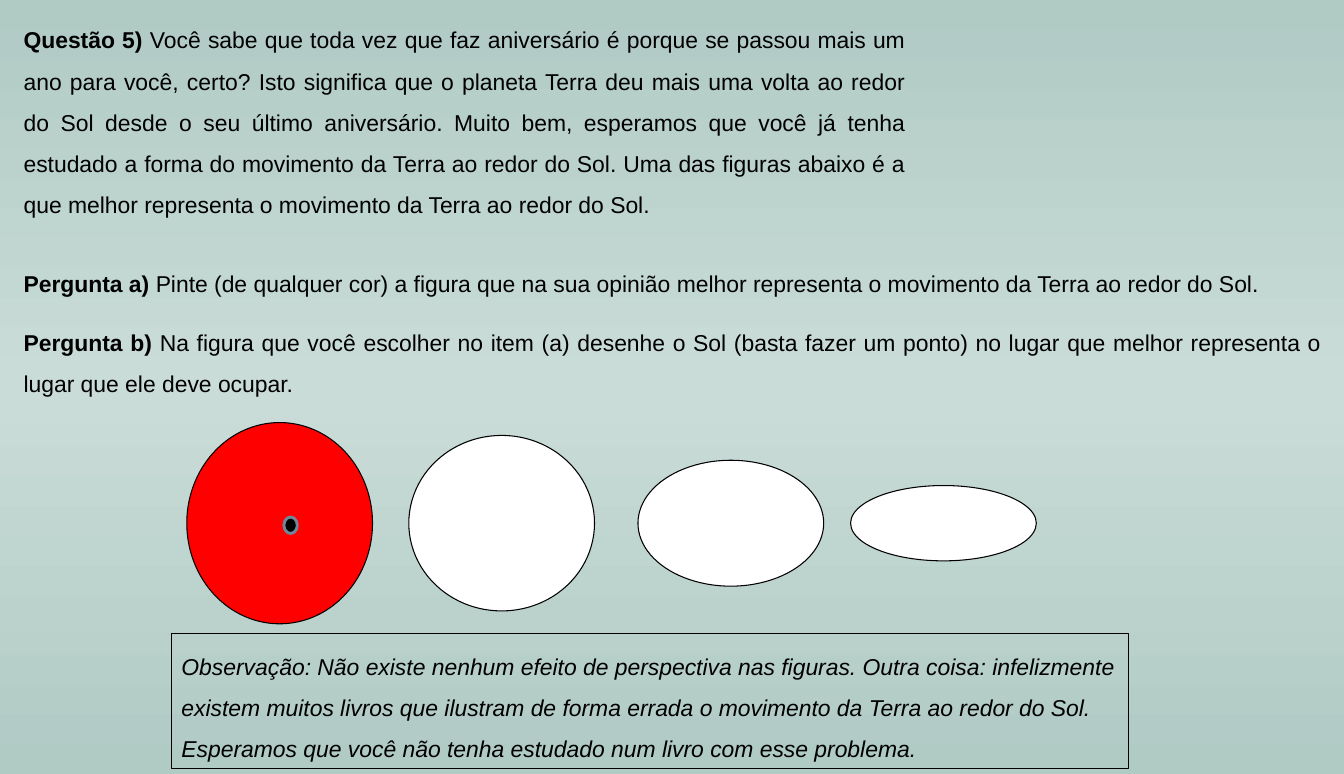
from copy import deepcopy

from pptx import Presentation
from pptx import util as u
from pptx.dml.color import RGBColor
from pptx.enum import shapes, text
from pptx.oxml.ns import qn

WIDE, HIGH = u.Inches(13.02), u.Inches(7.5)
BLACK = RGBColor(0x00, 0x00, 0x00)
WHITE = RGBColor(0xFF, 0xFF, 0xFF)
RED = RGBColor(0xFF, 0x00, 0x00)
SLATE = RGBColor(0x6D, 0x87, 0x9B)
SAGE = RGBColor(0xB0, 0xCA, 0xC4)
MIST = RGBColor(0xCA, 0xDC, 0xD8)

LEFT = 1
FULL = 98.08
ORBIT = 13.82
MIDDLE = 67.6
ORBITS = [(13.9, 26, RED), (30.42, 22.67, WHITE),
          (47.47, 16.27, WHITE), (63.29, 9.73, WHITE)]

INTRO = (
    "Você sabe que toda vez que faz aniversário é porque se passou mais um ano "
    "para você, certo? Isto significa que o planeta Terra deu mais uma volta ao "
    "redor do Sol desde o seu último aniversário. Muito bem, esperamos que você "
    "já tenha estudado a forma do movimento da Terra ao redor do Sol. Uma das "
    "figuras abaixo é a que melhor representa o movimento da Terra ao redor do Sol.")
PAINT = (
    " Pinte (de qualquer cor) a figura que na sua opinião melhor representa o "
    "movimento da Terra ao redor do Sol.")
DRAW = (
    " Na figura que você escolher no item (a) desenhe o Sol (basta fazer um "
    "ponto) no lugar que melhor representa o lugar que ele deve ocupar.")
NOTE = (
    "Observação: Não existe nenhum efeito de perspectiva nas figuras. Outra "
    "coisa: infelizmente existem muitos livros que ilustram de forma errada o "
    "movimento da Terra ao redor do Sol. Esperamos que você não tenha estudado "
    "num livro com esse problema.")


def place(x, y, w, h):
    return [round(share * side / 100)
            for share, side in zip((x, y, w, h), (WIDE, HIGH) * 2)]


def paint_back(slide):
    fill = slide.background.fill
    fill.gradient()
    fill.gradient_angle = 270
    stops = slide.element.find(".//" + qn("a:gsLst"))
    stops.insert(1, deepcopy(stops[0]))
    for stop, color, spot in zip(fill.gradient_stops, (SAGE, MIST, SAGE), (0, 0.5, 1)):
        stop.color.rgb = color
        stop.position = spot


def add_run(para, words, bold=False, italic=False):
    run = para.add_run()
    run.text = words
    font = run.font
    font.name, font.size = "Arial", u.Pt(16)
    font.bold, font.italic = bold, italic
    font.color.rgb = BLACK


def add_text(slide, box, align):
    shape = slide.shapes.add_textbox(*place(*box))
    frame = shape.text_frame
    frame.word_wrap = True
    frame.auto_size = text.MSO_AUTO_SIZE.SHAPE_TO_FIT_TEXT
    para = frame.paragraphs[0]
    para.alignment = align
    para.line_spacing = 1.5
    return shape, para


def add_task(slide, box, label, words):
    _, para = add_text(slide, box, text.PP_ALIGN.JUSTIFY)
    add_run(para, label, bold=True)
    add_run(para, words)


def add_note(slide, box, words):
    shape, para = add_text(slide, box, text.PP_ALIGN.LEFT)
    shape.line.color.rgb = BLACK
    shape.line.width = u.Pt(0.75)
    add_run(para, words, italic=True)


def add_oval(slide, box, fill, line=BLACK, width=0.75):
    oval = slide.shapes.add_shape(shapes.MSO_SHAPE.OVAL, *place(*box))
    oval.shadow.inherit = False
    oval.fill.solid()
    oval.fill.fore_color.rgb = fill
    oval.line.color.rgb = line
    oval.line.width = u.Pt(width)


def main():
    deck = Presentation()
    deck.slide_width, deck.slide_height = WIDE, HIGH
    slide = deck.slides.add_slide(deck.slide_layouts[6])
    paint_back(slide)
    add_task(slide, (LEFT, 0.93, 67.13, 27.6), "Questão 5) ", INTRO)
    for x, tall, color in ORBITS:
        add_oval(slide, (x, MIDDLE - tall / 2, ORBIT, tall), color)
    add_task(slide, (LEFT, 32.4, FULL, 6), "Pergunta a)", PAINT)
    add_task(slide, (LEFT, 40, FULL, 11.47), "Pergunta b)", DRAW)
    add_oval(slide, (21.12, 66.8, 1, 2.13), BLACK, SLATE, 2)
    add_note(slide, (12.75, 81.87, 71.2, 17.47), NOTE)
    deck.save("out.pptx")


if __name__ == "__main__":
    main()
